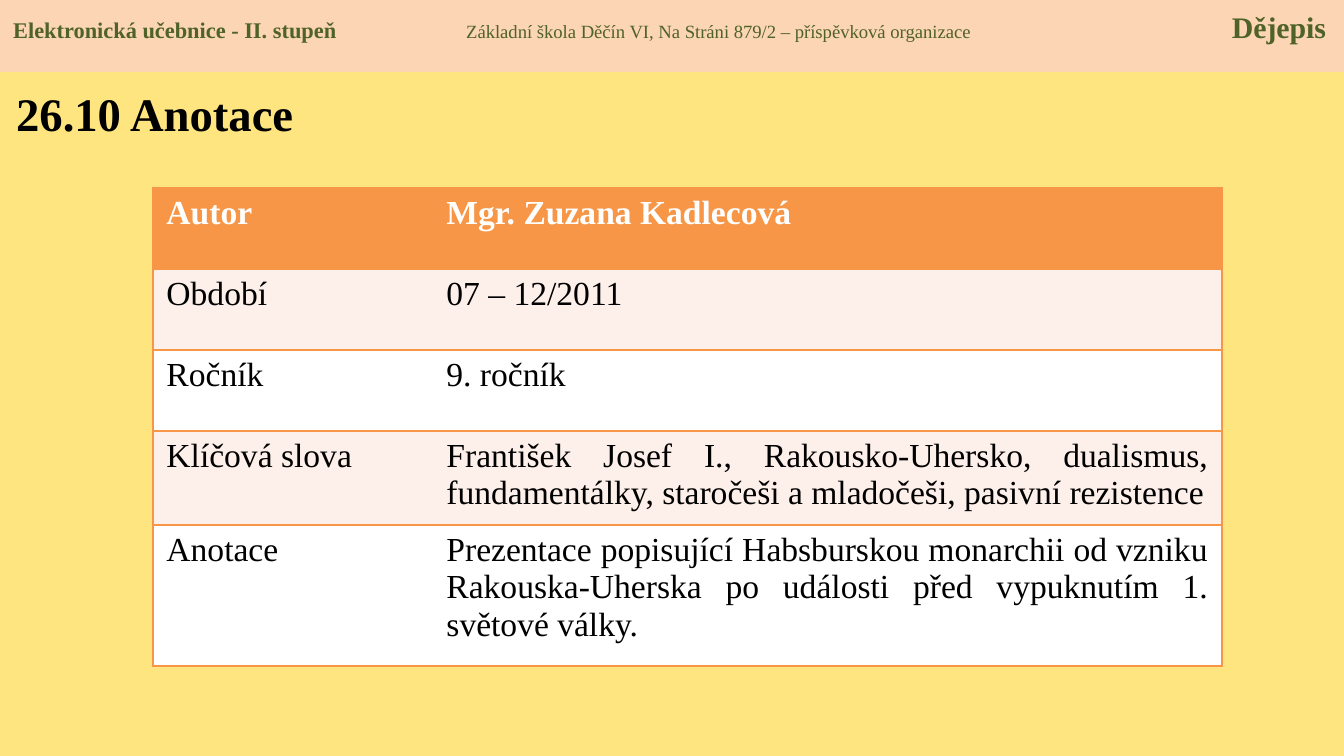
from lxml.etree import SubElement
from pptx import Presentation
from pptx.dml.color import RGBColor
from pptx.enum.shapes import MSO_SHAPE
from pptx.enum.text import MSO_ANCHOR, PP_ALIGN
from pptx.oxml.ns import qn
from pptx.util import Pt

FONT = "Times New Roman"
YELLOW = RGBColor(0xFF, 0xE5, 0x80)
PEACH = RGBColor(0xFC, 0xD5, 0xB5)
GREEN = RGBColor(0x4F, 0x62, 0x28)
ORANGE = RGBColor(0xF7, 0x96, 0x46)
BLUSH = RGBColor(0xFD, 0xEF, 0xE9)
WHITE = RGBColor(0xFF, 0xFF, 0xFF)
BLACK = RGBColor(0, 0, 0)

HEADER = [
    ("Elektronická učebnice - II. stupeň", 12, True),
    ("\tZákladní škola Děčín VI, Na Stráni 879/2 – příspěvková organizace", 10, False),
    ("\tDějepis", 16, True),
]
HEADER_TABS = [(453, "l"), (1313, "r")]
TITLE = "26.10 Anotace"
ANNOTATION = [
    ("Autor", "Mgr. Zuzana Kadlecová"),
    ("Období", "07 – 12/2011"),
    ("Ročník", "9. ročník"),
    ("Klíčová slova", "František Josef I., Rakousko-Uhersko, dualismus, "
     "fundamentálky, staročeši a mladočeši, pasivní rezistence"),
    ("Anotace", "Prezentace popisující Habsburskou monarchii od vzniku "
     "Rakouska-Uherska po události před vypuknutím 1. světové války."),
]
COLUMN_WIDTHS = [280, 789]
ROW_HEIGHTS = [81, 81, 81, 94, 141]
JUSTIFIED_FROM = 3


def px(length):
    return round(length * 914400 / 134.4)


def style(font, size, color, bold):
    font.name, font.size, font.bold = FONT, Pt(size), bold
    font.color.rgb = color


def add_border(cell, side, visible):
    line = SubElement(cell._tc.get_or_add_tcPr(), qn(f"a:ln{side}"), w=str(Pt(1)))
    if visible:
        fill = SubElement(line, qn("a:solidFill"))
        SubElement(fill, qn("a:srgbClr"), val=str(ORANGE))
    else:
        SubElement(line, qn("a:noFill"))


def add_header(slide):
    band = slide.shapes.add_shape(MSO_SHAPE.RECTANGLE, 0, 0, px(1344), px(72))
    band.shadow.inherit = False
    band.fill.solid()
    band.fill.fore_color.rgb = PEACH
    band.line.fill.background()
    frame = band.text_frame
    frame.vertical_anchor = MSO_ANCHOR.TOP
    frame.margin_top = px(9)
    paragraph = frame.paragraphs[0]
    paragraph.alignment = PP_ALIGN.LEFT
    tabs = SubElement(paragraph._p.get_or_add_pPr(), qn("a:tabLst"))
    for position, align in HEADER_TABS:
        SubElement(tabs, qn("a:tab"), pos=str(px(position)), algn=align)
    for text, size, bold in HEADER:
        run = paragraph.add_run()
        run.text = text
        style(run.font, size, GREEN, bold)


def add_title(slide):
    title = slide.shapes.add_textbox(px(3), px(74), px(563), px(88))
    frame = title.text_frame
    frame.word_wrap = True
    frame.margin_top = px(11)
    frame.text = TITLE
    style(frame.paragraphs[0].runs[0].font, 25, BLACK, True)


def add_annotation(slide):
    table = slide.shapes.add_table(
        len(ANNOTATION), len(COLUMN_WIDTHS), px(153), px(188),
        px(sum(COLUMN_WIDTHS)), px(sum(ROW_HEIGHTS))).table
    for column, width in zip(table.columns, COLUMN_WIDTHS):
        column.width = px(width)
    for r, (texts, height) in enumerate(zip(ANNOTATION, ROW_HEIGHTS)):
        table.rows[r].height = px(height)
        heading = r == 0
        for c, text in enumerate(texts):
            cell = table.cell(r, c)
            for side, visible in (("L", c == 0), ("R", c == 1), ("T", True), ("B", True)):
                add_border(cell, side, visible)
            cell.fill.solid()
            cell.fill.fore_color.rgb = ORANGE if heading else (WHITE, BLUSH)[r % 2]
            cell.text = text
            paragraph = cell.text_frame.paragraphs[0]
            if c == 1 and r >= JUSTIFIED_FROM:
                paragraph.alignment = PP_ALIGN.JUSTIFY
            style(paragraph.runs[0].font, 18, WHITE if heading else BLACK, heading)


def main():
    """Build the annotation slide of the history textbook."""
    presentation = Presentation()
    presentation.slide_width, presentation.slide_height = px(1344), px(756)
    slide = presentation.slides.add_slide(presentation.slide_layouts[6])
    slide.background.fill.solid()
    slide.background.fill.fore_color.rgb = YELLOW
    add_header(slide)
    add_title(slide)
    add_annotation(slide)
    presentation.save("out.pptx")


if __name__ == "__main__":
    main()
